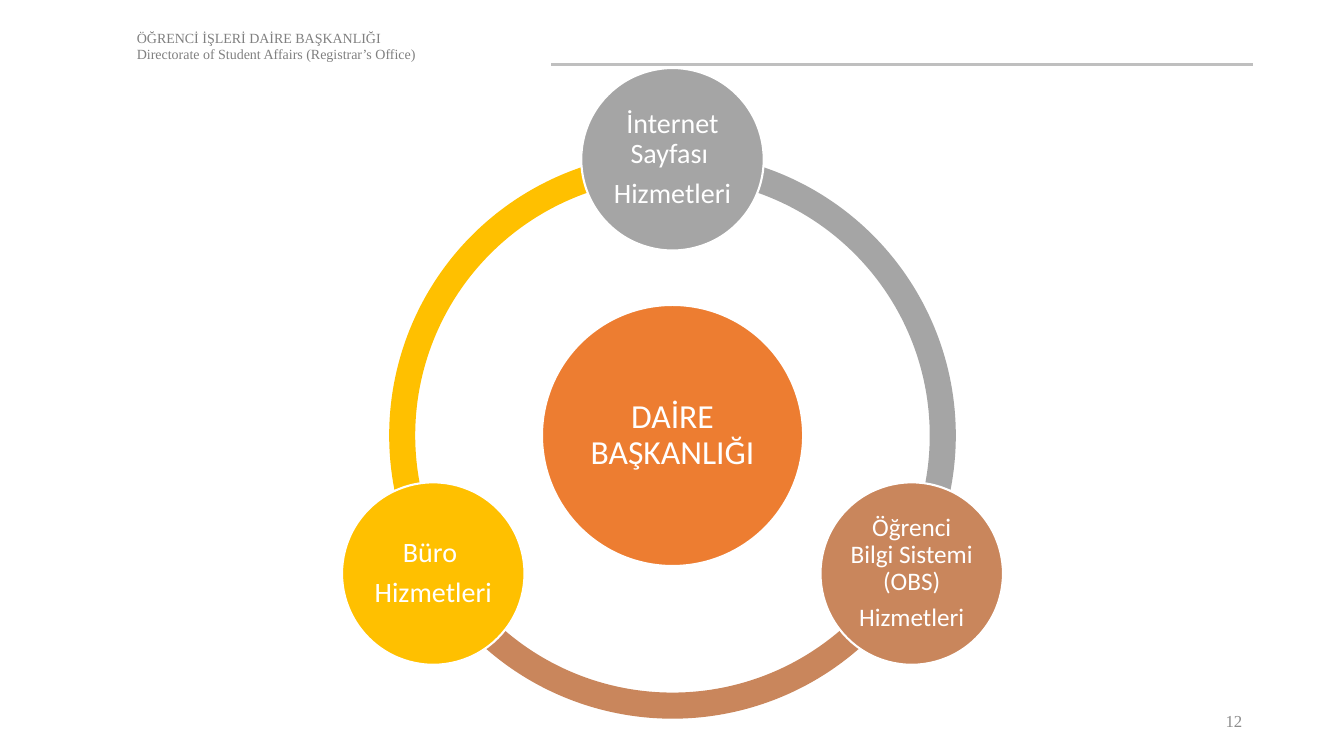
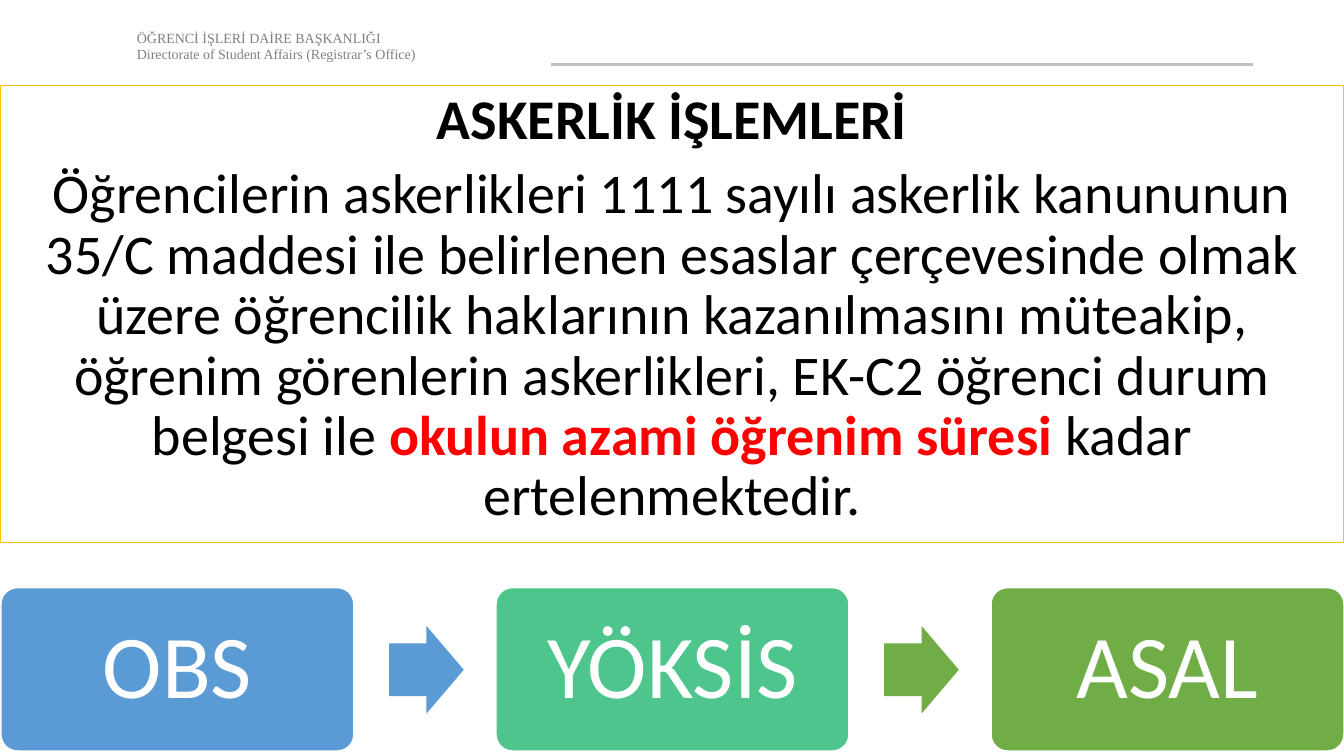
from dataclasses import dataclass
from math import cos, radians, sin

from lxml import etree
from pptx import Presentation
from pptx.dml.color import RGBColor
from pptx.enum import shapes as es, text as et
from pptx.oxml.ns import qn
from pptx.util import Inches, Pt


@dataclass(frozen=True)
class Theme:
    """Colours, fonts and type sizes."""
    white: str = "FFFFFF"
    black: str = "000000"
    red: str = "FF0000"
    gold: str = "FFC000"
    gray: str = "A5A5A5"
    brown: str = "C9865C"
    orange: str = "ED7D31"
    blue: str = "5B9BD5"
    mint: str = "4DC58D"
    green: str = "70AD47"
    rule: str = "BFBFBF"
    head: str = "808080"
    num: str = "8C8C8C"
    sans: str = "Calibri"
    serif: str = "Times New Roman"
    tiny: int = 10
    note: int = 12
    small: int = 18
    node: int = 20
    hub: int = 24
    body: int = 40
    step: int = 64


T = Theme()
Shape = es.MSO_SHAPE
Align = et.PP_ALIGN


def tint(color):
    """Turn a hex string into a colour."""
    return RGBColor.from_string(color)


class Deck:
    """Holds the style and the current slide."""

    def __init__(self):
        """Open a wide presentation."""
        self.prs = Presentation()
        self.prs.slide_width = Inches(13.33)
        self.prs.slide_height = Inches(7.5)
        self.slide = None

    def page(self, layout):
        """Start a slide with the shared header and rule."""
        self.slide = self.prs.slides.add_slide(self.prs.slide_layouts[layout])
        for item in list(self.slide.placeholders):
            if item.placeholder_format.idx != 1:
                item.element.getparent().remove(item.element)
        self.line(5.47, 0.64, 12.43, 0.64)
        self.label(1.26, 0.24, 6.67, 0.44,
                   ["ÖĞRENCİ İŞLERİ DAİRE BAŞKANLIĞI",
                    "Directorate of Student Affairs (Registrar’s Office)"],
                   T.tiny, T.head)

    def line(self, x1, y1, x2, y2):
        """Draw a thin rule."""
        rule = self.slide.shapes.add_connector(
            es.MSO_CONNECTOR.STRAIGHT, *map(Inches, (x1, y1, x2, y2)))
        rule.line.color.rgb = tint(T.rule)
        rule.line.width = Pt(1.5)
        etree.SubElement(rule.element.spPr, qn("a:effectLst"))

    def run(self, para, text, size, color, font=T.sans, bold=False):
        """Add one styled run."""
        run = para.add_run()
        run.text = text
        run.font.name = font
        run.font.size = Pt(size)
        run.font.bold = bold
        run.font.color.rgb = tint(color)

    def paras(self, frame, count, align, lead=1, gap=0):
        """Yield formatted paragraphs, with gaps only between them."""
        for i in range(count):
            para = frame.add_paragraph() if i else frame.paragraphs[0]
            para.alignment = align
            para.line_spacing = lead
            para.space_before = Pt(gap if i else 0)
            para.space_after = Pt(0)
            yield para

    def label(self, x, y, w, h, lines, size, color,
              align=Align.LEFT, anchor=et.MSO_ANCHOR.TOP):
        """Place a serif text box."""
        frame = self.slide.shapes.add_textbox(
            *map(Inches, (x, y, w, h))).text_frame
        frame.word_wrap = True
        frame.vertical_anchor = anchor
        for para, text in zip(self.paras(frame, len(lines), align), lines):
            self.run(para, text, size, color, T.serif)

    def shape(self, kind, x, y, w, h, fill, edge=0, adj=()):
        """Draw a filled preset shape."""
        item = self.slide.shapes.add_shape(kind, *map(Inches, (x, y, w, h)))
        item.shadow.inherit = False
        item.fill.solid()
        item.fill.fore_color.rgb = tint(fill)
        if edge:
            item.line.color.rgb = tint(T.white)
            item.line.width = Pt(edge)
        else:
            item.line.fill.background()
        for i, value in enumerate(adj):
            item.adjustments[i] = value
        return item

    def caption(self, item, lines, size, inset):
        """Centre white text in a shape."""
        frame = item.text_frame
        frame.word_wrap = True
        frame.vertical_anchor = et.MSO_ANCHOR.MIDDLE
        frame.margin_left = frame.margin_right = Inches(inset)
        frame.margin_top = frame.margin_bottom = Inches(inset)
        rows = self.paras(frame, len(lines), Align.CENTER, 0.9, size * 0.35)
        for para, text in zip(rows, lines):
            self.run(para, text, size, T.white)

    def disc(self, x, y, width, fill, lines, size):
        """Draw a labelled circle around a centre point."""
        item = self.shape(Shape.OVAL, x - width / 2, y - width / 2,
                          width, width, fill, 1.5)
        self.caption(item, lines, size, 0.03)

    def panel(self, x, y, w, h, rows):
        """Fill the body placeholder with framed, centred text."""
        body = self.slide.placeholders[1]
        body.left, body.top, body.width, body.height = map(
            Inches, (x, y, w, h))
        body.fill.solid()
        body.fill.fore_color.rgb = tint(T.white)
        body.line.color.rgb = tint(T.gold)
        body.line.width = Pt(1)
        frame = body.text_frame
        frame.auto_size = et.MSO_AUTO_SIZE.NONE
        frame.vertical_anchor = et.MSO_ANCHOR.TOP
        paras = self.paras(frame, len(rows), Align.CENTER, 0.9, 10)
        for para, runs in zip(paras, rows):
            props = para._p.get_or_add_pPr()
            props.set("marL", "0")
            props.set("indent", "0")
            etree.SubElement(props, qn("a:buNone"))
            for text, color, bold in runs:
                self.run(para, text, T.body, color, bold=bold)


def wheel(deck):
    """Build the ring of services around the office."""
    deck.page(6)
    deck.label(11.97, 6.95, 0.45, 0.4, ["12"], T.note, T.num,
               Align.RIGHT, et.MSO_ANCHOR.MIDDLE)
    mid_x, mid_y, ring, reach = 6.67, 4.32, 5.62, 2.74
    nodes = [
        (150, T.gold, ["Büro ", "Hizmetleri"], T.node),
        (30, T.brown, ["Öğrenci Bilgi Sistemi (OBS)", "Hizmetleri"], T.small),
        (270, T.gray, ["İnternet Sayfası ", "Hizmetleri"], T.node),
    ]
    for angle, fill, _, _ in nodes:
        end = (angle + 120) % 360
        deck.shape(Shape.BLOCK_ARC, mid_x - ring / 2, mid_y - ring / 2,
                   ring, ring, fill, adj=(angle * 0.6, end * 0.6, 0.046))
    deck.disc(mid_x, mid_y, 2.59, T.orange, ["DAİRE BAŞKANLIĞI"], T.hub)
    for angle, fill, lines, size in reversed(nodes):
        turn = radians(angle)
        deck.disc(mid_x + reach * cos(turn), mid_y + reach * sin(turn),
                  1.81, fill, lines, size)


def service(deck):
    """Build the military service text and its three steps."""
    deck.page(1)
    deck.panel(0, 0.85, 13.33, 4.53, [
        [("ASKERLİK İŞLEMLERİ", T.black, True)],
        [("Öğrencilerin askerlikleri 1111 sayılı askerlik kanununun 35/C "
          "maddesi ile belirlenen esaslar çerçevesinde olmak üzere "
          "öğrencilik haklarının kazanılmasını müteakip, öğrenim görenlerin "
          "askerlikleri, EK-C2 öğrenci durum belgesi ile ", T.black, False),
         ("okulun azami öğrenim süresi ", T.red, True),
         ("kadar ertelenmektedir.", T.black, False)],
    ])
    steps = [("OBS", T.blue), ("YÖKSİS", T.mint), ("ASAL", T.green)]
    arrows = [T.blue, T.green]
    left, pitch = 0.01, 4.91
    for i, (text, fill) in enumerate(steps):
        item = deck.shape(Shape.ROUNDED_RECTANGLE, left + i * pitch, 5.83,
                          3.5, 1.62, fill, 1, (0.1,))
        deck.caption(item, [text], T.step, 0.27)
    for i, fill in enumerate(arrows):
        deck.shape(Shape.RIGHT_ARROW, left + 3.85 + i * pitch, 6.21,
                   0.74, 0.87, fill, adj=(0.6, 0.5))


def main():
    """Build and save the deck."""
    deck = Deck()
    wheel(deck)
    service(deck)
    deck.prs.save("out.pptx")


if __name__ == "__main__":
    main()
